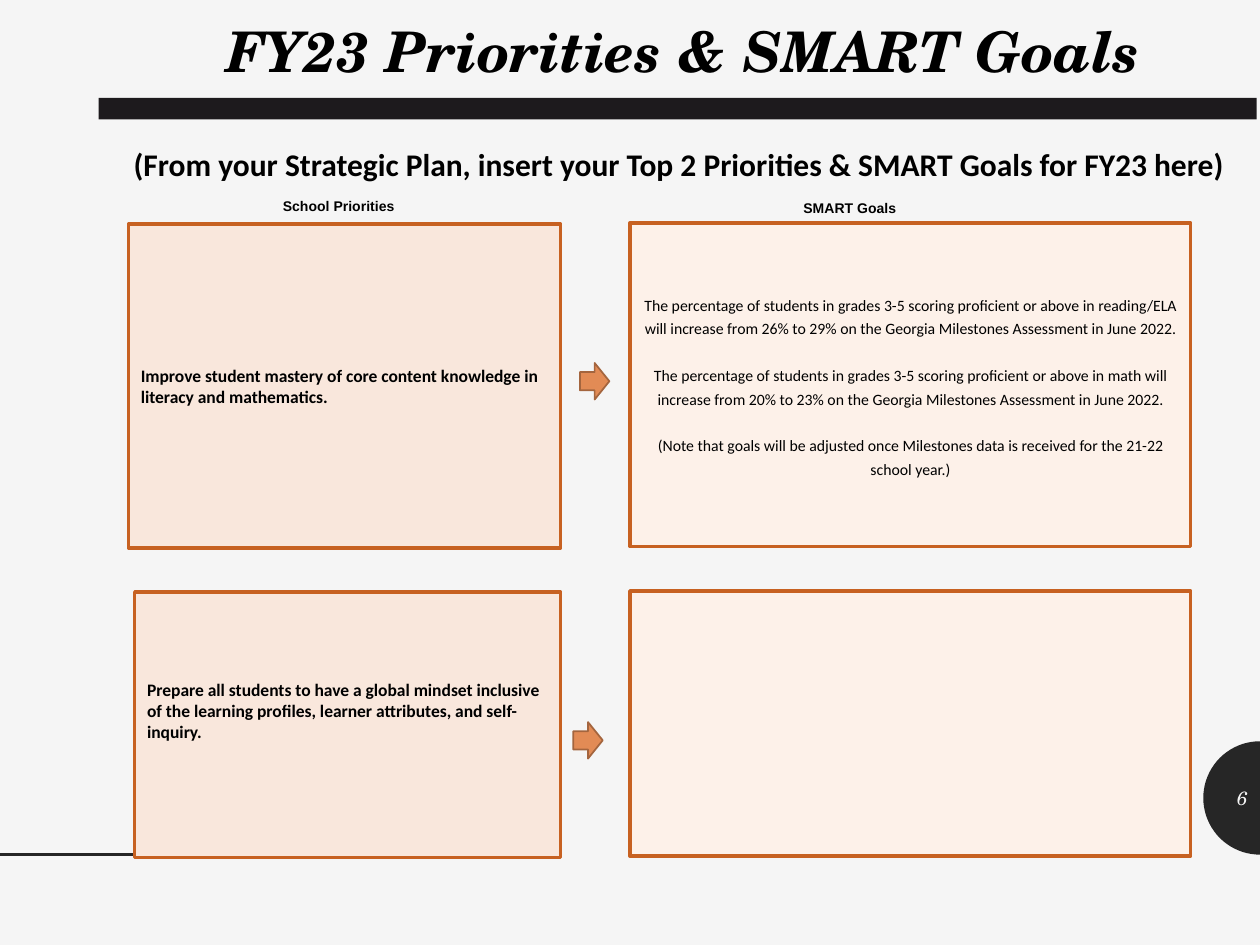
"""Build the FY23 priorities and SMART goals slide."""
from math import cos, pi, sin

from lxml import etree
from pptx import Presentation
from pptx.dml.color import RGBColor
from pptx.enum.shapes import MSO_CONNECTOR, MSO_SHAPE
from pptx.enum.text import MSO_ANCHOR, PP_ALIGN
from pptx.oxml.ns import qn
from pptx.util import Pt

RECTANGLE, ARROW = MSO_SHAPE.RECTANGLE, MSO_SHAPE.RIGHT_ARROW
STRAIGHT = MSO_CONNECTOR.STRAIGHT
TOP, MIDDLE = MSO_ANCHOR.TOP, MSO_ANCHOR.MIDDLE
LEFT, CENTER, RIGHT = PP_ALIGN.LEFT, PP_ALIGN.CENTER, PP_ALIGN.RIGHT

BACKGROUND = RGBColor(0xF5, 0xF5, 0xF5)
BLACK = RGBColor(0x00, 0x00, 0x00)
CHARCOAL = RGBColor(0x26, 0x26, 0x26)
BAR = RGBColor(0x1D, 0x1A, 0x1D)
PRIORITY_FILL = RGBColor(0xF9, 0xE7, 0xDC)
GOAL_FILL = RGBColor(0xFD, 0xF1, 0xE9)
BOX_LINE = RGBColor(0xC7, 0x61, 0x21)
ARROW_FILL = RGBColor(0xE2, 0x8B, 0x55)
ARROW_LINE = RGBColor(0xA4, 0x65, 0x3E)
HEADING_FONT, BODY_FONT, LABEL_FONT = "TeX Gyre Schola", "Calibri", "Arial"


def paint(shape, fill, line=None, width=0):
    """Give a shape a flat fill and an optional outline."""
    shape.shadow.inherit = False
    shape.fill.solid()
    shape.fill.fore_color.rgb = fill
    if line is None:
        shape.line.fill.background()
    else:
        shape.line.color.rgb = line
        shape.line.width = Pt(width)


def write(shape, text, font, size, align=CENTER, bold=False, italic=False,
          color=BLACK, anchor=TOP):
    """Set the text of a shape and format every paragraph."""
    frame = shape.text_frame
    frame.text = text
    frame.word_wrap = True
    frame.vertical_anchor = anchor
    for paragraph in frame.paragraphs:
        paragraph.alignment = align
        for run in paragraph.runs:
            run.font.name, run.font.size = font, Pt(size)
            run.font.bold, run.font.italic = bold, italic
            run.font.color.rgb = color


presentation = Presentation()
presentation.slide_width, presentation.slide_height = Pt(720), Pt(540)
slide = presentation.slides.add_slide(presentation.slide_layouts[5])
slide.background.fill.solid()
slide.background.fill.fore_color.rgb = BACKGROUND
shapes = slide.shapes

center_x, center_y, radius, steps = 720, 456, 32.4, 40
angles = [pi / 2 + pi * step / steps for step in range(steps + 1)]
arc = [(Pt(center_x + radius * cos(angle)), Pt(center_y + radius * sin(angle)))
       for angle in angles]
builder = shapes.build_freeform(*arc[0])
builder.add_line_segments(arc[1:], close=True)
paint(builder.convert_to_shape(), CHARCOAL)

footer_line = shapes.add_connector(STRAIGHT, Pt(0), Pt(488.2), Pt(265.7), Pt(488.2))
footer_line.line.color.rgb = CHARCOAL
footer_line.line.width = Pt(2)
etree.SubElement(footer_line._element.spPr, qn("a:effectLst"))

title_bar = shapes.add_shape(RECTANGLE, Pt(56.4), Pt(56), Pt(661.7), Pt(12.3))
paint(title_bar, BAR)

title = shapes.title
title.left, title.top, title.width, title.height = Pt(69), Pt(6), Pt(643), Pt(46)
write(title, "FY23 Priorities & SMART Goals", HEADING_FONT, 32, bold=True, italic=True)

LABELS = [
    (56.2, 79.2, 663.8, 51, BODY_FONT, 18,
     "(From your Strategic Plan, insert your Top 2 Priorities & SMART Goals for FY23 here)"),
    (154, 109.4, 79.2, 17, LABEL_FONT, 8, "School Priorities"),
    (439.2, 110.2, 92.9, 17, LABEL_FONT, 8, "SMART Goals"),
]
for left, top, width, height, font, size, text in LABELS:
    label = shapes.add_textbox(Pt(left), Pt(top), Pt(width), Pt(height))
    write(label, text, font, size, bold=True)

GOALS = "\n".join([
    "The percentage of students in grades 3-5 scoring proficient or above in reading/ELA "
    "will increase from 26% to 29% on the Georgia Milestones Assessment in June 2022.",
    "The percentage of students in grades 3-5 scoring proficient or above in math will "
    "increase from 20% to 23% on the Georgia Milestones Assessment in June 2022.",
    "(Note that goals will be adjusted once Milestones data is received for the 21-22 "
    "school year.)",
])
ROWS = [
    (73.4, 127.4, 185, 331.4, 207.4, 3.6, GOALS,
     "Improve student mastery of core content knowledge in literacy and mathematics."),
    (77, 337.7, 151.6, 327.6, 412.6, 20, "",
     "Prepare all students to have a global mindset inclusive of the learning profiles, "
     "learner attributes, and self-inquiry."),
]
priority_right, goal_left, goal_width = 320.4, 360, 320.4
for left, top, height, arrow_left, arrow_top, bottom_inset, goals, priority in ROWS:
    goal_box = shapes.add_shape(
        RECTANGLE, Pt(goal_left), Pt(top), Pt(goal_width), Pt(height))
    paint(goal_box, GOAL_FILL, BOX_LINE, 2)
    write(goal_box, goals, BODY_FONT, 9, anchor=MIDDLE)
    for index, paragraph in enumerate(goal_box.text_frame.paragraphs):
        paragraph.line_spacing = 1.24
        paragraph.space_before = Pt(13.4 if index else 0)

    priority_box = shapes.add_shape(
        RECTANGLE, Pt(left), Pt(top + 0.7), Pt(priority_right - left), Pt(height))
    paint(priority_box, PRIORITY_FILL, BOX_LINE, 2)
    write(priority_box, priority, BODY_FONT, 10, LEFT, bold=True, anchor=MIDDLE)
    priority_box.text_frame.margin_bottom = Pt(bottom_inset)

    arrow = shapes.add_shape(ARROW, Pt(arrow_left), Pt(arrow_top), Pt(16.8), Pt(20.9))
    paint(arrow, ARROW_FILL, ARROW_LINE, 1)

page_number = shapes.add_textbox(Pt(687.6), Pt(441.4), Pt(32.4), Pt(28.8))
write(page_number, "6", HEADING_FONT, 11, RIGHT, italic=True, color=BACKGROUND,
      anchor=MIDDLE)

presentation.save("out.pptx")
